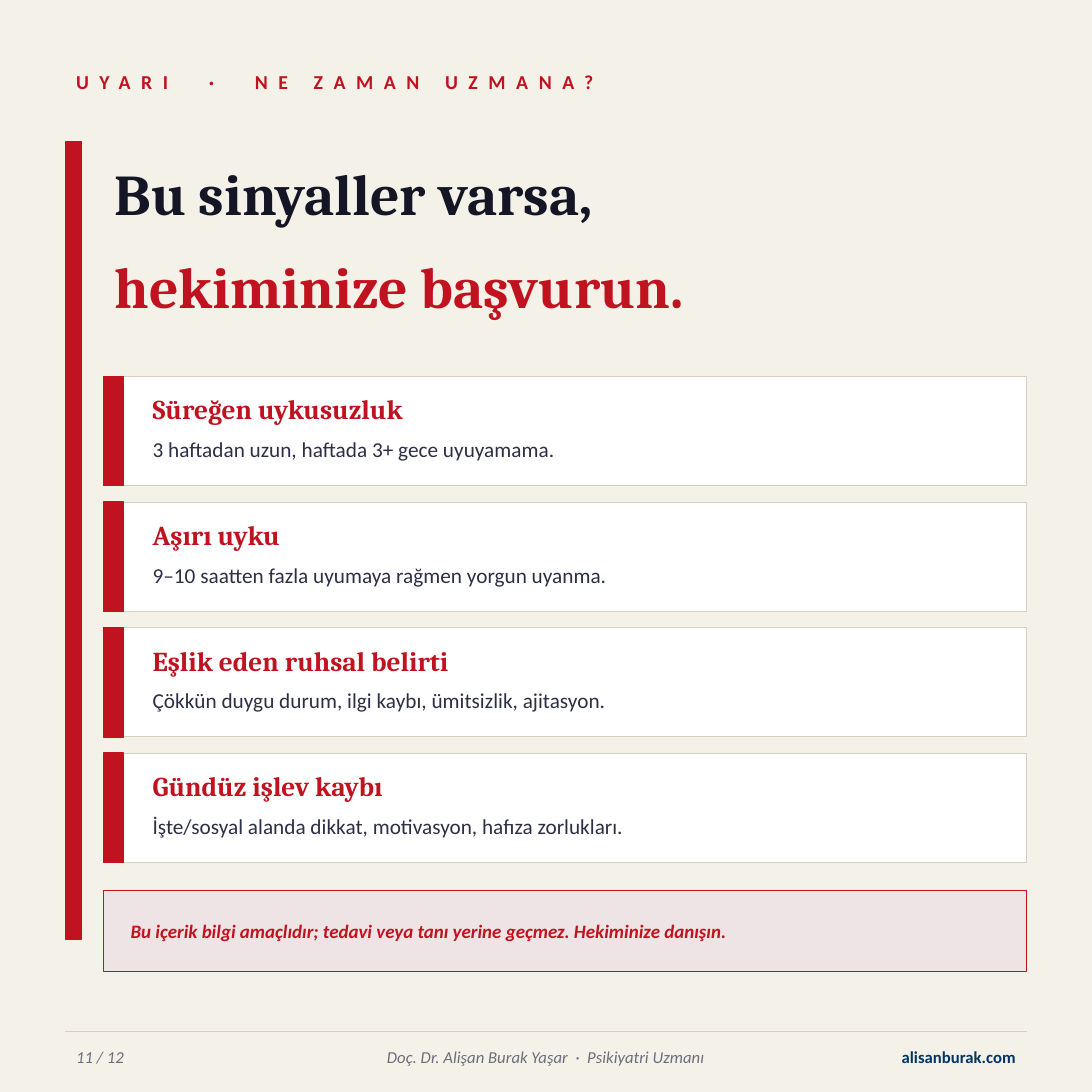
from lxml import etree
from pptx import Presentation
from pptx.dml.color import RGBColor
from pptx.enum import shapes, text
from pptx.oxml.ns import qn
from pptx.util import Cm, Pt

CREAM = RGBColor(0xF4, 0xF1, 0xE8)
RED = RGBColor(0xC1, 0x12, 0x1F)
INK = RGBColor(0x14, 0x16, 0x26)
SLATE = RGBColor(0x2C, 0x2F, 0x45)
GREY = RGBColor(0x6B, 0x6E, 0x7D)
NAVY = RGBColor(0x00, 0x35, 0x66)
SAND = RGBColor(0xD6, 0xD0, 0xBF)
WHITE = RGBColor(0xFF, 0xFF, 0xFF)
BLUSH = RGBColor(0xEF, 0xE4, 0xE5)
HEADING_FONT, BODY_FONT = "Cambria", "Calibri"

KICKER = "UYARI  ·  NE ZAMAN UZMANA?"
TITLE = [("Bu sinyaller varsa,", INK), ("hekiminize başvurun.", RED)]
SIGNALS = [
    ("Süreğen uykusuzluk", "3 haftadan uzun, haftada 3+ gece uyuyamama."),
    ("Aşırı uyku", "9–10 saatten fazla uyumaya rağmen yorgun uyanma."),
    ("Eşlik eden ruhsal belirti", "Çökkün duygu durum, ilgi kaybı, ümitsizlik, ajitasyon."),
    ("Gündüz işlev kaybı", "İşte/sosyal alanda dikkat, motivasyon, hafıza zorlukları."),
]
NOTICE = "Bu içerik bilgi amaçlıdır; tedavi veya tanı yerine geçmez. Hekiminize danışın."
PAGE = "11 / 12"
AUTHOR = "Doç. Dr. Alişan Burak Yaşar  ·  Psikiyatri Uzmanı"
SITE = "alisanburak.com"

# Lengths in centimetres
LEFT, RIGHT = 1.52, 23.88
CARD_LEFT, CARD_TOP, CARD_HEIGHT, CARD_GAP = 2.41, 8.76, 2.54, 0.38
CARD_WIDTH = RIGHT - CARD_LEFT
FOOTER_TOP, FOOTER_HEIGHT, FOOTER_SIDE = 24.13, 0.89, 3.81


def place(left, top, width, height):
    return Cm(left), Cm(top), Cm(width), Cm(height)


def write(paragraph, words, size, color, font=BODY_FONT, bold=False, italic=False,
          align=text.PP_ALIGN.LEFT, spacing=0):
    """Fill a paragraph with one formatted run; spacing is between letters, in points."""
    paragraph.alignment = align
    run = paragraph.add_run()
    run.text = words
    run.font.name, run.font.size = font, Pt(size)
    run.font.bold, run.font.italic = bold, italic
    run.font.color.rgb = color
    if spacing:
        run._r.get_or_add_rPr().set("spc", str(spacing * 100))


def add_text(slide, box, words, size, color, anchor=text.MSO_ANCHOR.MIDDLE, **style):
    frame = slide.shapes.add_textbox(*place(*box)).text_frame
    frame.word_wrap = True
    frame.vertical_anchor = anchor
    write(frame.paragraphs[0], words, size, color, **style)


def add_box(slide, box, fill, line, line_width=1):
    shape = slide.shapes.add_shape(shapes.MSO_SHAPE.RECTANGLE, *place(*box))
    shape.shadow.inherit = False
    shape.fill.solid()
    shape.fill.fore_color.rgb = fill
    shape.line.color.rgb = line
    shape.line.width = Pt(line_width)


def add_title(slide):
    title = slide.shapes.title
    title.left, title.top, title.width, title.height = place(CARD_LEFT, 3.05, 21.59, 4.45)
    frame = title.text_frame
    frame.auto_size = text.MSO_AUTO_SIZE.NONE
    frame.vertical_anchor = text.MSO_ANCHOR.MIDDLE
    for index, (words, color) in enumerate(TITLE):
        paragraph = frame.add_paragraph() if index else frame.paragraphs[0]
        paragraph.line_spacing = Pt(61.2)
        paragraph.space_before = Pt(0)
        write(paragraph, words, 38, color, font=HEADING_FONT, bold=True)


def add_card(slide, top, heading, detail):
    add_box(slide, (CARD_LEFT, top, CARD_WIDTH, CARD_HEIGHT), WHITE, SAND, 0.7)
    add_box(slide, (CARD_LEFT, top, 0.46, CARD_HEIGHT), RED, RED)
    add_text(slide, (3.3, top + 0.25, 20.07, 1.02), heading, 18, RED,
             anchor=text.MSO_ANCHOR.TOP, font=HEADING_FONT, bold=True)
    add_text(slide, (3.3, top + 1.27, 20.07, 1.14), detail, 14, SLATE,
             anchor=text.MSO_ANCHOR.TOP)


def add_footer(slide):
    rule = slide.shapes.add_connector(shapes.MSO_CONNECTOR.STRAIGHT,
                                      Cm(LEFT), Cm(24), Cm(RIGHT), Cm(24))
    rule.line.color.rgb = SAND
    rule.line.width = Pt(0.75)
    etree.SubElement(rule._element.spPr, qn("a:effectLst"))
    add_text(slide, (LEFT, FOOTER_TOP, FOOTER_SIDE, FOOTER_HEIGHT), PAGE, 11, GREY,
             italic=True)
    add_text(slide, (5.59, FOOTER_TOP, 14.22, FOOTER_HEIGHT), AUTHOR, 11, GREY,
             italic=True, align=text.PP_ALIGN.CENTER)
    add_text(slide, (RIGHT - FOOTER_SIDE, FOOTER_TOP, FOOTER_SIDE, FOOTER_HEIGHT), SITE,
             11, NAVY, bold=True, align=text.PP_ALIGN.RIGHT)


def main():
    presentation = Presentation()
    presentation.slide_width = presentation.slide_height = Cm(25.4)
    slide = presentation.slides.add_slide(presentation.slide_layouts.get_by_name("Title Only"))
    slide.background.fill.solid()
    slide.background.fill.fore_color.rgb = CREAM

    add_text(slide, (LEFT, 1.4, RIGHT - LEFT, 1.02), KICKER, 13, RED, bold=True, spacing=7)
    add_box(slide, (LEFT, 3.3, 0.38, 18.54), RED, RED)
    add_title(slide)
    for index, (heading, detail) in enumerate(SIGNALS):
        add_card(slide, CARD_TOP + index * (CARD_HEIGHT + CARD_GAP), heading, detail)
    add_box(slide, (CARD_LEFT, 20.7, CARD_WIDTH, 1.9), BLUSH, RED, 0.5)
    add_text(slide, (2.79, 20.7, 20.7, 1.9), NOTICE, 12.5, RED, bold=True, italic=True)
    add_footer(slide)
    presentation.save("out.pptx")


if __name__ == "__main__":
    main()
